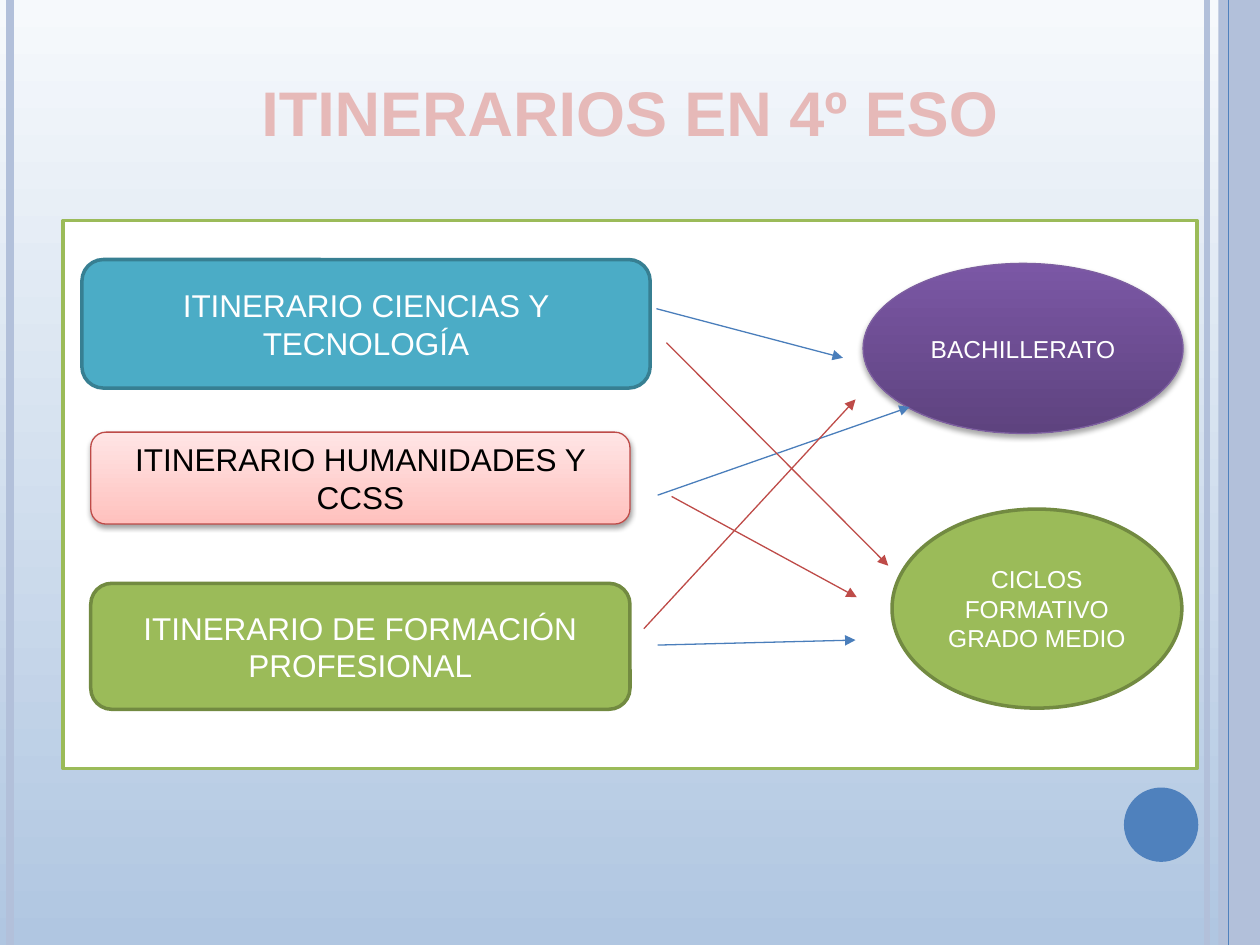
import collections

import pptx
import pptx.dml.color
import pptx.enum.shapes
import pptx.enum.text
import pptx.oxml
import pptx.oxml.ns
import pptx.util
from pptx.util import Inches

RGBColor = pptx.dml.color.RGBColor
SHAPE = pptx.enum.shapes.MSO_SHAPE

WHITE = RGBColor(0xFF, 0xFF, 0xFF)
BLACK = RGBColor(0x00, 0x00, 0x00)
SKY_TOP = RGBColor(0xF6, 0xF9, 0xFC)
SKY_BOTTOM = RGBColor(0xB0, 0xC6, 0xE1)
STRIPE = RGBColor(0xB2, 0xC0, 0xDA)
BLUE = RGBColor(0x4F, 0x81, 0xBD)
BLUE_ARROW = RGBColor(0x4A, 0x7E, 0xBB)
RED = RGBColor(0xBE, 0x4B, 0x48)
ROSE = RGBColor(0xE6, 0xB9, 0xB8)
PINK_TOP = RGBColor(0xFF, 0xE5, 0xE5)
PINK_BOTTOM = RGBColor(0xFF, 0xC1, 0xBE)
TEAL = RGBColor(0x4B, 0xAC, 0xC6)
TEAL_DARK = RGBColor(0x37, 0x7F, 0x92)
GREEN = RGBColor(0x9B, 0xBB, 0x59)
GREEN_DARK = RGBColor(0x72, 0x8A, 0x41)
PURPLE_TOP = RGBColor(0x7B, 0x57, 0xA5)
PURPLE_BOTTOM = RGBColor(0x5E, 0x43, 0x7F)
PURPLE_EDGE = RGBColor(0x7D, 0x5F, 0xA0)

Box = collections.namedtuple("Box", "left top width height")


def inside(area, left, top, width, height):
    return Box(area.left + left, area.top + top, width, height)


def paint(fill, colors):
    if len(colors) == 1:
        fill.solid()
        fill.fore_color.rgb = colors[0]
        return
    fill.gradient()
    fill.gradient_angle = 270
    for stop, color in zip(fill.gradient_stops, colors):
        stop.color.rgb = color


def add_block(page, kind, box, colors, edge=None, weight=2):
    block = page.shapes.add_shape(kind, *map(Inches, box))
    block.shadow.inherit = False
    paint(block.fill, colors)
    if edge is None:
        block.line.fill.background()
    else:
        block.line.color.rgb = edge
        block.line.width = pptx.util.Pt(weight)
    return block


def add_shadow(block, opacity, distance):
    effects = block._element.spPr.find(pptx.oxml.ns.qn("a:effectLst"))
    effects.append(pptx.oxml.parse_xml(
        f'<a:outerShdw {pptx.oxml.ns.nsdecls("a")} blurRad="{pptx.util.Pt(3.1)}" '
        f'dist="{pptx.util.Pt(distance)}" dir="5400000" rotWithShape="0">'
        f'<a:srgbClr val="000000"><a:alpha val="{opacity * 1000}"/></a:srgbClr>'
        '</a:outerShdw>'))


def write(shape, text, size, color, bold=False):
    frame = shape.text_frame
    frame.word_wrap = True
    frame.vertical_anchor = pptx.enum.text.MSO_ANCHOR.MIDDLE
    frame.text = text
    para = frame.paragraphs[0]
    para.alignment = pptx.enum.text.PP_ALIGN.CENTER
    font = para.runs[0].font
    font.name = "Arial"
    font.size = pptx.util.Pt(size)
    font.bold = bold
    font.color.rgb = color
    return para


def add_line(page, start, end, color, weight, arrow=False):
    line = page.shapes.add_connector(
        pptx.enum.shapes.MSO_CONNECTOR.STRAIGHT, *map(Inches, start + end))
    line.line.color.rgb = color
    line.line.width = pptx.util.Pt(weight)
    if arrow:
        tail = pptx.oxml.parse_xml(
            f'<a:tailEnd {pptx.oxml.ns.nsdecls("a")} type="triangle"/>')
        line.line._get_or_add_ln().append(tail)
    line._element.spPr.append(
        pptx.oxml.parse_xml(f'<a:effectLst {pptx.oxml.ns.nsdecls("a")}/>'))


def draw_backdrop(page, area):
    paint(page.background.fill, [SKY_TOP, SKY_BOTTOM])
    bottom = area.top + area.height

    def add_stripe(offset, color, weight):
        left = area.left + offset
        add_line(page, (left, area.top), (left, bottom), color, weight)

    add_stripe(9.58, STRIPE, 3)
    add_stripe(0.08, STRIPE, 4.5)
    add_block(page, SHAPE.RECTANGLE, inside(area, 9.67, 0, 0.33, area.height), [STRIPE])
    add_stripe(9.75, BLUE, 0.75)
    add_block(page, SHAPE.OVAL, inside(area, 8.92, 6.25, 0.59, 0.59), [BLUE])


def draw_title(page, area):
    title = page.shapes.add_textbox(*map(Inches, area))
    frame = title.text_frame
    frame.margin_left = frame.margin_right = 0
    frame.margin_top = frame.margin_bottom = 0
    para = write(title, "ITINERARIOS EN 4º ESO", 36, ROSE, bold=True)
    para.line_spacing = 0.9


def draw_pathways(page, area):
    rounded = SHAPE.ROUNDED_RECTANGLE
    add_block(page, SHAPE.RECTANGLE, area, [WHITE], GREEN)

    science = add_block(
        page, rounded, inside(area, 0.15, 0.31, 4.51, 1.02), [TEAL], TEAL_DARK)
    write(science, "ITINERARIO CIENCIAS Y TECNOLOGÍA", 18, WHITE)

    humanities = add_block(
        page, rounded, inside(area, 0.22, 1.68, 4.28, 0.73),
        [PINK_TOP, PINK_BOTTOM], RED, 0.75)
    add_shadow(humanities, 37, 1.6)
    write(humanities, "ITINERARIO HUMANIDADES Y CCSS", 18, BLACK)

    vocational = add_block(
        page, rounded, inside(area, 0.22, 2.88, 4.28, 1), [GREEN], GREEN_DARK)
    write(vocational, "ITINERARIO DE FORMACIÓN PROFESIONAL", 18, WHITE)

    bachillerato = add_block(
        page, SHAPE.OVAL, inside(area, 6.35, 0.34, 2.54, 1.35),
        [PURPLE_TOP, PURPLE_BOTTOM], PURPLE_EDGE, 0.75)
    add_shadow(bachillerato, 35, 1.8)
    write(bachillerato, "BACHILLERATO", 14, WHITE)

    cycles = add_block(
        page, SHAPE.OVAL, inside(area, 6.58, 2.29, 2.3, 1.58), [GREEN], GREEN_DARK)
    write(cycles, "CICLOS FORMATIVO GRADO MEDIO", 14, WHITE)

    arrows = [
        (4.71, 0.7, 6.19, 1.09, BLUE_ARROW),
        (4.72, 2.18, 6.72, 1.48, BLUE_ARROW),
        (4.72, 3.37, 6.29, 3.33, BLUE_ARROW),
        (4.79, 0.97, 6.55, 2.74, RED),
        (4.83, 2.19, 6.3, 2.99, RED),
        (4.61, 3.24, 6.29, 1.42, RED),
    ]
    for x1, y1, x2, y2, color in arrows:
        start = (area.left + x1, area.top + y1)
        end = (area.left + x2, area.top + y2)
        add_line(page, start, end, color, 0.75, arrow=True)


def main():
    deck = pptx.Presentation()
    deck.slide_width = Inches(10)
    deck.slide_height = Inches(7.5)
    page = deck.slides.add_slide(deck.slide_layouts[6])
    draw_backdrop(page, Box(0, 0, 10, 7.5))
    draw_title(page, Box(0.5, 0.3, 9, 1.25))
    draw_pathways(page, Box(0.5, 1.75, 9, 4.35))
    deck.save("out.pptx")


if __name__ == "__main__":
    main()
